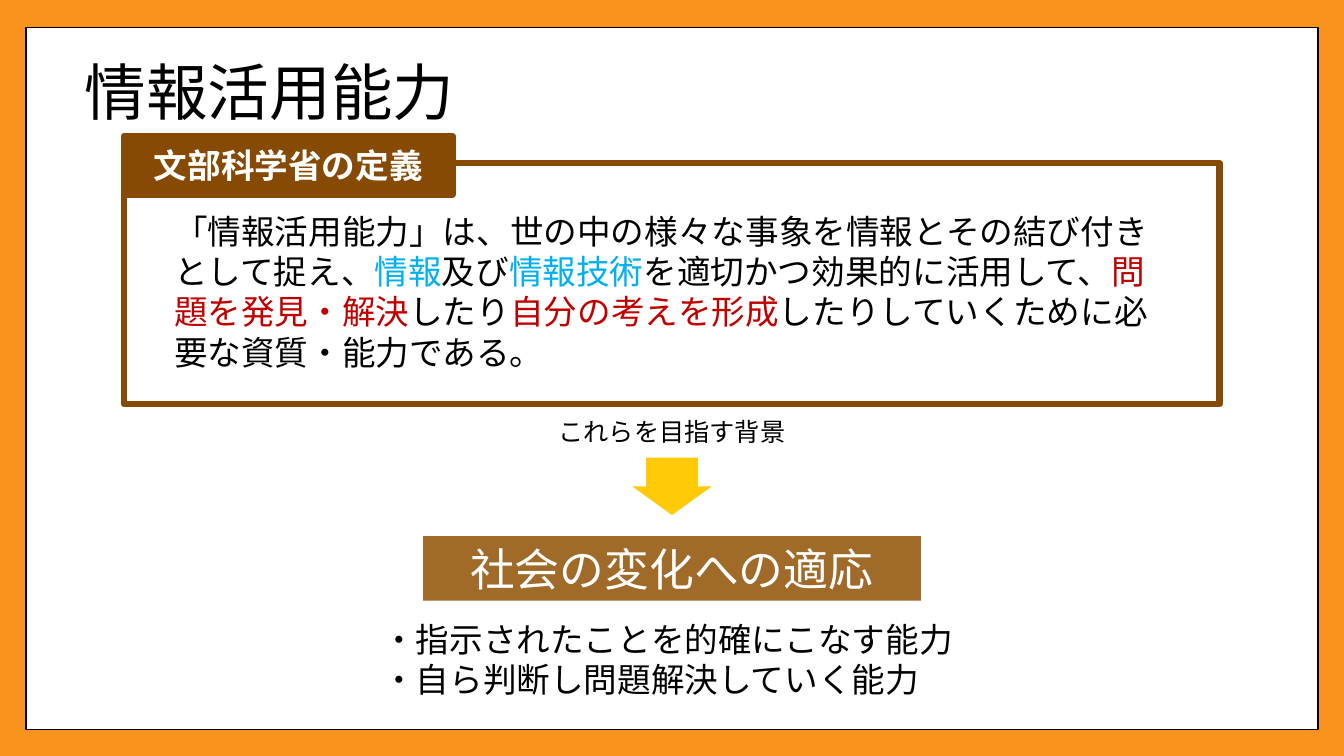
from lxml import etree
from pptx import Presentation
from pptx.dml.color import RGBColor
from pptx.enum.shapes import MSO_SHAPE
from pptx.enum.text import MSO_ANCHOR, PP_ALIGN
from pptx.oxml.ns import qn
from pptx.util import Emu, Inches, Pt

RECTANGLE = MSO_SHAPE.RECTANGLE
DOWN_ARROW = MSO_SHAPE.DOWN_ARROW
TOP, MIDDLE = MSO_ANCHOR.TOP, MSO_ANCHOR.MIDDLE
LEFT, CENTER = PP_ALIGN.LEFT, PP_ALIGN.CENTER

FONT = "Noto Sans CJK JP"
COLUMNS = 160
CELL = Inches(13.333) / COLUMNS  # square grid cell, 160 columns by 90 rows
COLORS = {
    "orange": "F8931D",
    "white": "FFFFFF",
    "black": "000000",
    "yellow": "FFCA08",
    "tan": "A06A29",
    "brown": "864A04",
    "blue": "00B0F0",
    "red": "C00000",
}

DEFINITION = [
    ("「情報活用能力」は、世の中の様々な事象を情報とその結び付きとして捉え、", "black"),
    ("情報", "blue"),
    ("及び", "black"),
    ("情報技術", "blue"),
    ("を適切かつ効果的に活用して、", "black"),
    ("問題を発見・解決", "red"),
    ("したり", "black"),
    ("自分の考えを形成", "red"),
    ("したりしていくために必要な資質・能力である。", "black"),
]
ABILITIES = ["・指示されたことを的確にこなす能力", "・自ら判断し問題解決していく能力"]


def color(name):
    return RGBColor.from_string(COLORS[name])


def place(row, width, height, column=None):
    """Turn grid units into lengths; without a column the box is centred."""
    if column is None:
        column = (COLUMNS - width) / 2
    return [Emu(round(units * CELL)) for units in (column, row, width, height)]


def write(shape, paragraphs, size, bold=False, align=LEFT, anchor=TOP, inset=None):
    """Fill a shape with paragraphs, each a list of (text, colour name)."""
    frame = shape.text_frame
    frame.word_wrap = True
    frame.vertical_anchor = anchor
    if inset is not None:
        for side in ("left", "right", "top", "bottom"):
            setattr(frame, f"margin_{side}", inset)
    for index, pieces in enumerate(paragraphs):
        paragraph = frame.add_paragraph() if index else frame.paragraphs[0]
        paragraph.alignment = align
        for text, color_name in pieces:
            run = paragraph.add_run()
            run.text = text
            for name, value in {"name": FONT, "size": Pt(size), "bold": bold}.items():
                setattr(run.font, name, value)
            run.font.color.rgb = color(color_name)
            # East Asian text takes its typeface from a:ea
            east_asian = etree.SubElement(run.font._element, qn("a:ea"))
            east_asian.set("typeface", FONT)


def add_box(slide, area, fill=None, line=None, line_width=1, kind=RECTANGLE):
    shape = slide.shapes.add_shape(kind, *area)
    shape.shadow.inherit = False
    if fill:
        shape.fill.solid()
        shape.fill.fore_color.rgb = color(fill)
    else:
        shape.fill.background()
    if line:
        shape.line.color.rgb = color(line)
        shape.line.width = Pt(line_width)
    else:
        shape.line.fill.background()
    return shape


def add_text(slide, area, paragraphs, size, **layout):
    write(slide.shapes.add_textbox(*area), paragraphs, size, **layout)


def main():
    presentation = Presentation()
    presentation.slide_width = Inches(13.333)
    presentation.slide_height = Inches(7.5)
    slide = presentation.slides.add_slide(presentation.slide_layouts[6])
    slide.background.fill.solid()
    slide.background.fill.fore_color.rgb = color("orange")

    # White page and title
    add_box(slide, place(3.24, 153.84, 83.64), "white", "black")
    add_text(slide, place(6.24, 113.88, 9.12, 10.08), [[("情報活用能力", "black")]], 44,
             anchor=MIDDLE, inset=0)

    # Framed definition with its tab
    frame_column = 14.76
    add_box(slide, place(19.44, 130.44, 28.68, frame_column), line="brown", line_width=4.5)
    tab = add_box(slide, place(16.2, 39.12, 6.96, frame_column), "brown", "brown", 4.5)
    write(tab, [[("文部科学省の定義", "white")]], 24, bold=True, align=CENTER, anchor=MIDDLE)
    add_text(slide, place(24.48, 121.92, 20.64, 19.56), [DEFINITION], 24)

    # Arrow to the background
    add_text(slide, place(48.96, 29.64, 4.8), [[("これらを目指す背景", "black")]], 18, align=CENTER)
    arrow = add_box(slide, place(54.48, 9.48, 6.84), "yellow", kind=DOWN_ARROW)
    arrow.adjustments[0] = 0.65
    arrow.adjustments[1] = 0.5

    # Adaptation to social change
    banner = add_box(slide, place(63.84, 59.28, 7.68), "tan")
    write(banner, [[("社会の変化への適応", "white")]], 32, align=CENTER, anchor=MIDDLE)
    add_text(slide, place(73.68, 69, 9.72), [[(text, "black")] for text in ABILITIES], 24, inset=0)

    presentation.save("out.pptx")


if __name__ == "__main__":
    main()
